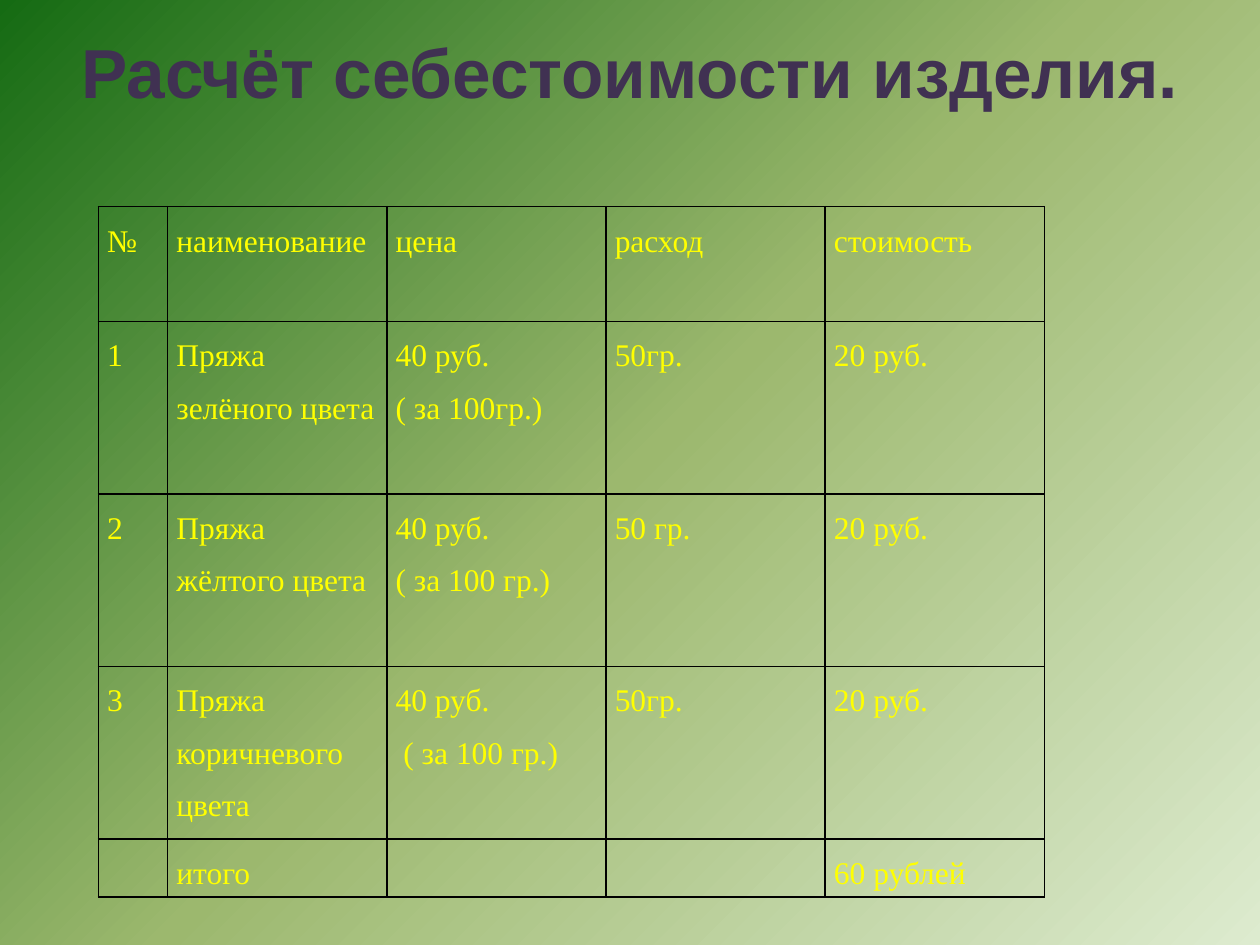
from lxml import etree
from pptx import Presentation
from pptx.dml.color import RGBColor
from pptx.enum import text
from pptx.oxml import ns
from pptx.util import Inches, Pt

HUES = {"pale": "DDEBCF", "mid": "9CB86E", "deep": "156B13",
        "title": "403152", "cell": "FFFF00", "line": "000000"}


def add(node, tag, **attrs):
    return etree.SubElement(node, ns.qn(tag), attrs)


def border(cell):
    props = cell._tc.get_or_add_tcPr()
    for i, side in enumerate(("a:lnL", "a:lnR", "a:lnT", "a:lnB")):
        line = etree.Element(ns.qn(side), w=str(Pt(1)))
        add(add(line, "a:solidFill"), "a:srgbClr", val=HUES["line"])
        props.insert(i, line)


deck = Presentation()
deck.slide_width, deck.slide_height = Inches(10), Inches(7.5)
slide = deck.slides.add_slide(deck.slide_layouts[5])

# Background: gradient centred on the bottom right corner
slide.background.fill.gradient()
grad = next(slide._element.iter(ns.qn("a:gradFill")))
for child in list(grad):
    grad.remove(child)
stops = add(grad, "a:gsLst")
for pos, hue in ((0, "pale"), (50, "mid"), (100, "deep")):
    add(add(stops, "a:gs", pos=str(pos * 1000)), "a:srgbClr", val=HUES[hue])
add(add(grad, "a:path", path="circle"), "a:fillToRect", l="100000", t="100000")

# Title, with a line break after the words
title = slide.shapes.title
title.left, title.top = Inches(0.5), Inches(0.3)
title.width, title.height = Inches(9), Inches(1.25)
frame = title.text_frame
frame.text = "Расчёт себестоимости изделия.\v"
frame.auto_size = text.MSO_AUTO_SIZE.NONE
frame.vertical_anchor = text.MSO_ANCHOR.MIDDLE
head = frame.paragraphs[0]
head.alignment = text.PP_ALIGN.CENTER
for run in head.runs:
    run.font.name, run.font.size, run.font.bold = "Arial", Pt(39.6), True
    run.font.color.rgb = RGBColor.from_string(HUES["title"])

# Cost table
rows = [
    ["№", "наименование", "цена", "расход", "стоимость"],
    ["1", "Пряжа зелёного цвета", "40 руб.\n( за 100гр.)", "50гр.", "20 руб."],
    ["2", "Пряжа жёлтого цвета", "40 руб.\n( за 100 гр.)", "50 гр.", "20 руб."],
    ["3", "Пряжа коричневого цвета", "40 руб.\n ( за 100 гр.)", "50гр.", "20 руб."],
    ["", "итого", "", "", "60 рублей"],
]
wide = [0.55] + [1.74] * 4
high = [0.91] + [1.37] * 3 + [0.46]
table = slide.shapes.add_table(
    len(rows), len(wide), Inches(0.78), Inches(1.64),
    Inches(sum(wide)), Inches(sum(high))).table
table.first_row = table.horz_banding = False
for col, size in zip(table.columns, wide):
    col.width = Inches(size)
for row, size, words in zip(table.rows, high, rows):
    row.height = Inches(size)
    for cell, word in zip(row.cells, words):
        cell.text_frame.text = word
        cell.margin_left = cell.margin_right = Inches(0.07)
        cell.margin_top = cell.margin_bottom = 0
        cell.fill.background()
        border(cell)
        for para in cell.text_frame.paragraphs:
            para.line_spacing = 1.5
            for run in para.runs:
                run.font.name, run.font.size = "Times New Roman", Pt(18)
                run.font.color.rgb = RGBColor.from_string(HUES["cell"])

deck.save("out.pptx")
